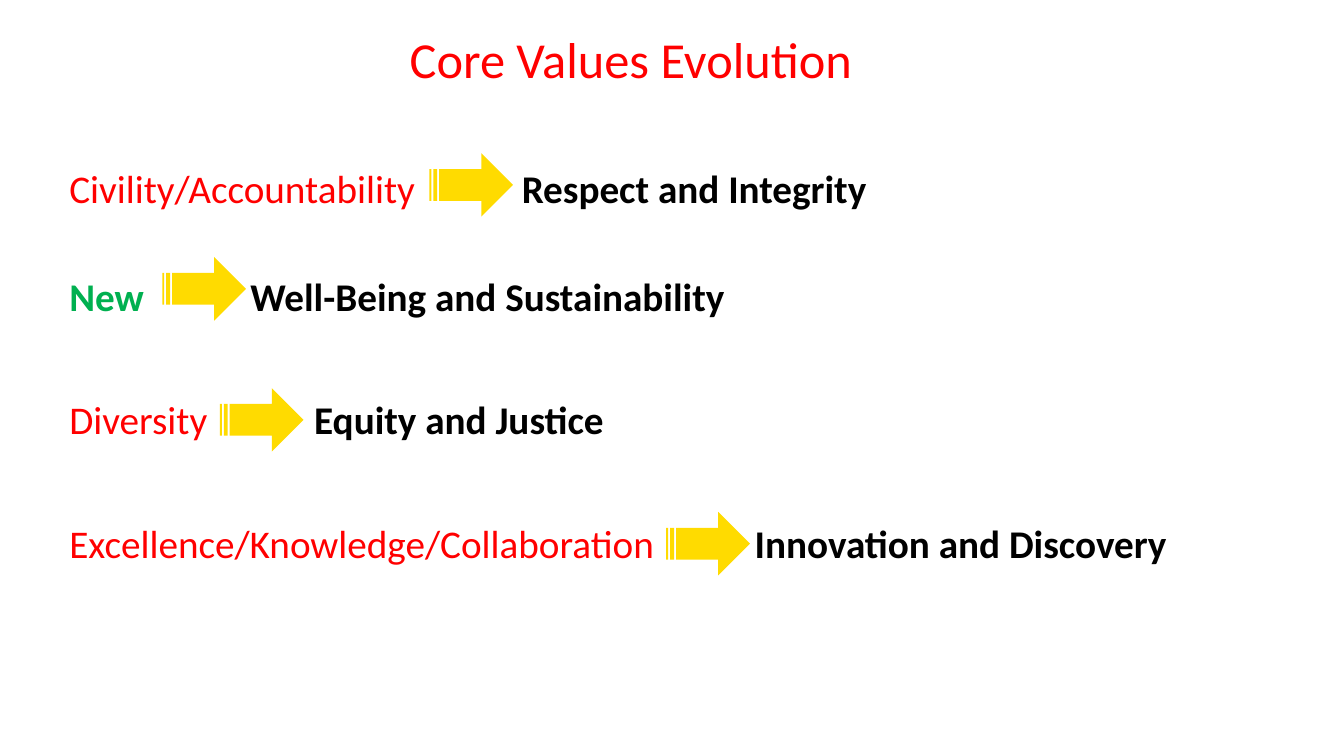
from dataclasses import dataclass

from lxml import etree
from pptx import Presentation
from pptx.dml.color import RGBColor
from pptx.enum.shapes import MSO_SHAPE
from pptx.enum.text import MSO_ANCHOR, MSO_AUTO_SIZE, PP_ALIGN
from pptx.oxml.ns import qn
from pptx.util import Cm, Pt

ARROW = MSO_SHAPE.STRIPED_RIGHT_ARROW
MIDDLE, BOTTOM = MSO_ANCHOR.MIDDLE, MSO_ANCHOR.BOTTOM
NO_FIT = MSO_AUTO_SIZE.NONE
CENTER = PP_ALIGN.CENTER


@dataclass(frozen=True)
class Theme:
    font: str = "Calibri"
    title_size: float = 36
    body_size: float = 28
    red: RGBColor = RGBColor(0xFF, 0x00, 0x00)
    green: RGBColor = RGBColor(0x00, 0xB0, 0x50)
    black: RGBColor = RGBColor(0x00, 0x00, 0x00)
    yellow: RGBColor = RGBColor(0xFF, 0xDB, 0x00)


theme = Theme()

prs = Presentation()
prs.slide_width, prs.slide_height = Cm(33.87), Cm(19.05)
s = prs.slides.add_slide(prs.slide_layouts[5])

# Title
title = s.shapes.title
title.left, title.top, title.width, title.height = Cm(3.2), Cm(0.36), Cm(25.4), Cm(2.03)
tf = title.text_frame
tf.text = "Core Values Evolution"
tf.auto_size = NO_FIT
tf.vertical_anchor = BOTTOM
p = tf.paragraphs[0]
p.alignment = CENTER
p.line_spacing = 0.9
p.font.name, p.font.size = theme.font, Pt(theme.title_size)
p.font.color.rgb = theme.red

# Old value, its colour and weight, new value, row top, tab stop, arrow left and top (cm)
rows = [
    ("Civility/Accountability", theme.red, False, "Respect and Integrity", 3.02, 11.4, 10.82, 3.86),
    ("New", theme.green, True, "Well-Being and Sustainability", 5.74, 4.56, 4.09, 6.48),
    ("Diversity", theme.red, False, "Equity and Justice", 8.84, 6.17, 5.54, 9.78),
    ("Excellence/Knowledge/Collaboration", theme.red, False, "Innovation and Discovery",
     11.96, 17.27, 16.79, 12.9),
]

for old, color, bold, new, top, tab, arrow_left, arrow_top in rows:
    # Old and new value on one line, parted by a tab stop
    box = s.shapes.add_textbox(Cm(1.5), Cm(top), Cm(29.24), Cm(2.82))
    tf = box.text_frame
    tf.word_wrap = True
    tf.vertical_anchor = MIDDLE
    p = tf.paragraphs[0]
    p.line_spacing = 1.5
    tabs = etree.SubElement(p._p.get_or_add_pPr(), qn("a:tabLst"))
    etree.SubElement(tabs, qn("a:tab"), pos=str(Cm(tab)), algn="l")
    p.font.name, p.font.size = theme.font, Pt(theme.body_size)
    for text, run_color, run_bold in ((old + "\t", color, bold), (new, theme.black, True)):
        r = p.add_run()
        r.text = text
        r.font.bold = run_bold
        r.font.color.rgb = run_color

    # Arrow between the two values
    arrow = s.shapes.add_shape(ARROW, Cm(arrow_left), Cm(arrow_top), Cm(2.11), Cm(1.6))
    arrow.shadow.inherit = False
    arrow.fill.solid()
    arrow.fill.fore_color.rgb = theme.yellow
    arrow.line.fill.background()

prs.save("out.pptx")
